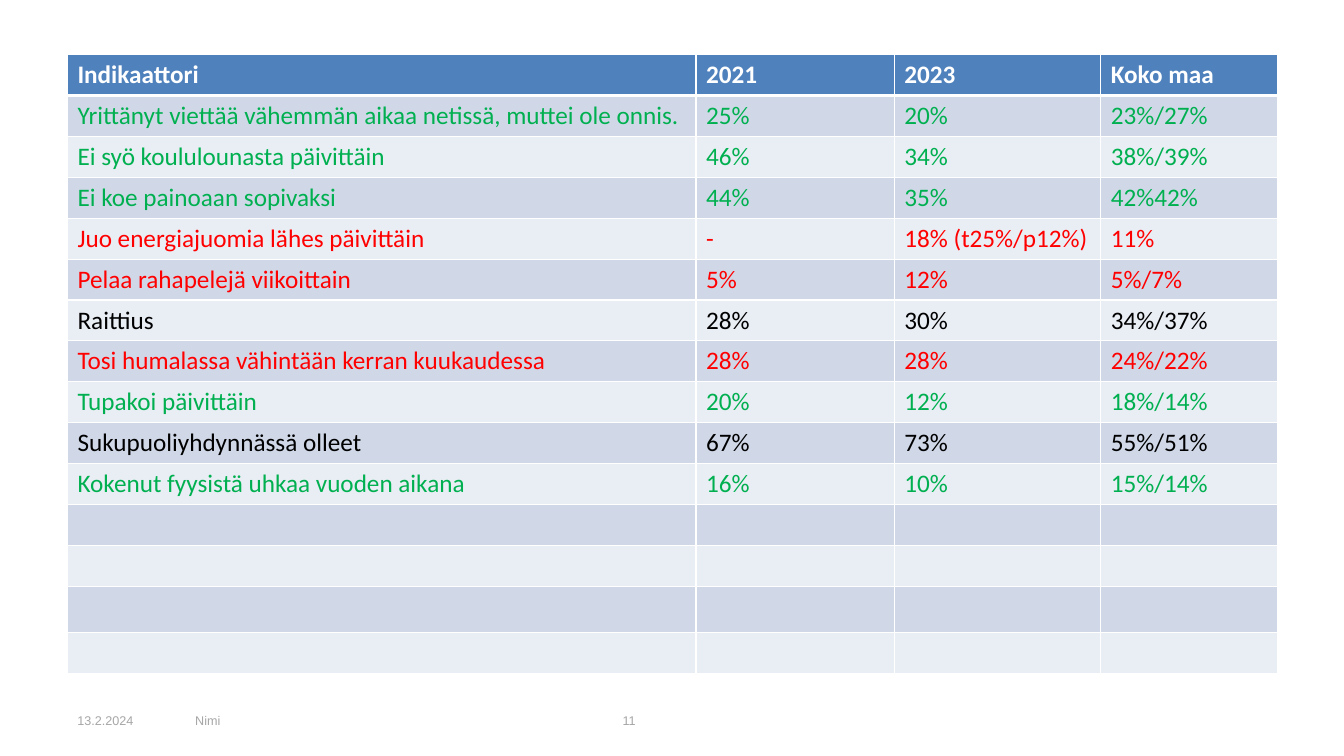
from lxml import etree
from pptx import Presentation
from pptx.dml.color import RGBColor
from pptx.enum import text
from pptx.oxml.ns import qn
from pptx.util import Cm, Pt

GREEN, RED, BLACK, WHITE = "00B050", "FF0000", "000000", "FFFFFF"
HEAD, BANDS = "4F81BD", ("D0D8E8", "E9EDF4")
COLS = (15.84, 5, 5.2, 4.45)
ROW, TALL = 1.03, 1.17
ROWS = [
    (WHITE, "Indikaattori", "2021", "2023", "Koko maa"),
    (GREEN, "Yrittänyt viettää vähemmän aikaa netissä, muttei ole onnis.",
     "25%", "20%", "23%/27%"),
    (GREEN, "Ei syö koululounasta päivittäin", "46%", "34%", "38%/39%"),
    (GREEN, "Ei koe painoaan sopivaksi", "44%", "35%", "42%42%"),
    (RED, "Juo energiajuomia lähes päivittäin", "-", "18% (t25%/p12%)", "11%"),
    (RED, "Pelaa rahapelejä viikoittain", "5%", "12%", "5%/7%"),
    (BLACK, "Raittius", "28%", "30%", "34%/37%"),
    (RED, "Tosi humalassa vähintään kerran kuukaudessa",
     "28%", "28%", "24%/22%"),
    (GREEN, "Tupakoi päivittäin", "20%", "12%", "18%/14%"),
    (BLACK, "Sukupuoliyhdynnässä olleet", "67%", "73%", "55%/51%"),
    (GREEN, "Kokenut fyysistä uhkaa vuoden aikana", "16%", "10%", "15%/14%"),
] + [(BLACK, "", "", "", "")] * 4


def color(code):
    return RGBColor.from_string(code)


def style(para, font, size, code, bold=False):
    para.font.size = Pt(size)
    for run in para.runs:
        run.font.name, run.font.size, run.font.bold = font, Pt(size), bold
        run.font.color.rgb = color(code)


def edge(cell, side, width):
    line = etree.SubElement(cell._tc.get_or_add_tcPr(), qn("a:ln" + side),
                            w=str(Pt(width)))
    fill = etree.SubElement(line, qn("a:solidFill"))
    etree.SubElement(fill, qn("a:srgbClr"), val=WHITE)


def add_grid(slide, left, top):
    high = ROW * (len(ROWS) - 1) + TALL
    grid = slide.shapes.add_table(len(ROWS), len(COLS), Cm(left), Cm(top),
                                  Cm(sum(COLS)), Cm(high)).table
    for col, wide in zip(grid.columns, COLS):
        col.width = Cm(wide)
    for i, (code, *words) in enumerate(ROWS):
        # The next-to-last row is a little taller
        grid.rows[i].height = Cm(TALL if i == len(ROWS) - 2 else ROW)
        for cell, word in zip(grid.rows[i].cells, words):
            # Borders: thick rule under the header
            for side in "LRTB":
                thick = (i, side) in ((0, "B"), (1, "T"))
                edge(cell, side, 3 if thick else 1)
            cell.fill.solid()
            cell.fill.fore_color.rgb = color(BANDS[(i - 1) % 2] if i else HEAD)
            cell.text_frame.text = word
            style(cell.text_frame.paragraphs[0], "Calibri", 18, code, i == 0)


def add_foot(slide, left, top, high):
    # Date, name and page number, each offset from the left edge
    for word, gap, wide in (("13.2.2024", 0, 2.97), ("Nimi", 2.97, 10.72),
                            ("11", 13.74, 7.9)):
        box = slide.shapes.add_textbox(Cm(left + gap), Cm(top),
                                       Cm(wide), Cm(high))
        frame = box.text_frame
        frame.word_wrap = True
        frame.vertical_anchor = text.MSO_ANCHOR.MIDDLE
        frame.text = word
        style(frame.paragraphs[0], "Arial", 9, "A6A6A6")


def main():
    deck = Presentation()
    deck.slide_width, deck.slide_height = Cm(33.87), Cm(19.05)
    slide = deck.slides.add_slide(deck.slide_layouts[6])
    add_grid(slide, 1.7, 1.38)
    add_foot(slide, 1.7, 17.65, 1.02)
    deck.save("out.pptx")


if __name__ == "__main__":
    main()
